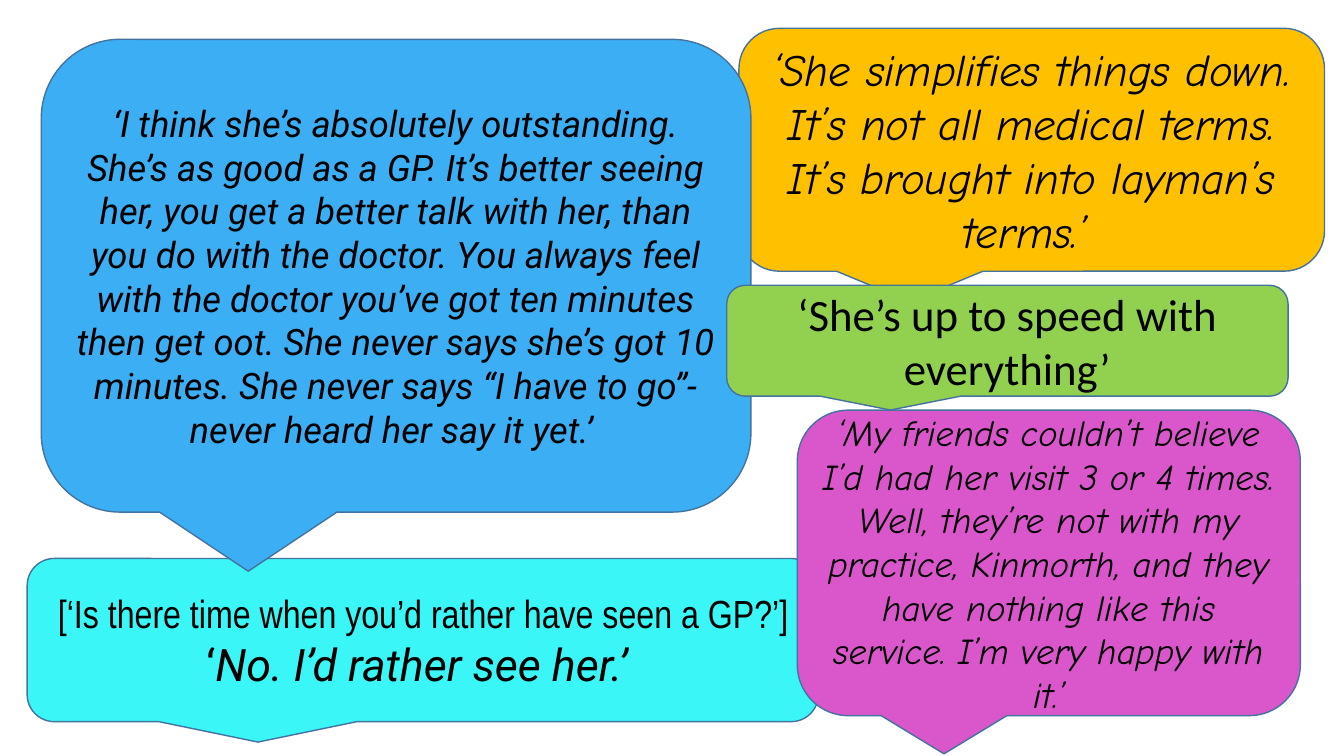
from pptx import Presentation
from pptx import util as u
from pptx.dml.color import RGBColor
from pptx.enum import shapes, text

COLOURS = {
    "cyan": "3AF6F6",
    "amber": "FFC000",
    "blue": "3CAEF4",
    "green": "92D050",
    "magenta": "D957CA",
    "outline": "43739E",
    "ink": "000000",
}

# Each quote: fill, box (left, top, width, height in points),
# runs (wording, font, size, italic); listed from back to front.
QUOTES = [
    ("cyan", (19.4, 398.9, 565.2, 116.6), [
        ("[‘Is there time when you’d rather have seen a GP?’] ", "Arial Narrow", 28, False),
        ("‘", "Roboto", 32, False),
        ("No. I’d rather see her.’ ", "Roboto", 32, True),
    ]),
    ("amber", (527.8, 20.2, 418.3, 173.5), [
        ("‘She simplifies things down. It’s not all medical terms. "
         "It’s brought into layman’s terms.’ ", "Comic Neue", 32, True),
    ]),
    ("blue", (29.5, 28.1, 506.9, 337.7), [
        ("‘I think she’s absolutely outstanding. She’s as good as a GP. "
         "It’s better seeing her, you get a better talk with her, than you do "
         "with the doctor. You always feel with the doctor you’ve got ten "
         "minutes then get oot. She never says she’s got 10 minutes. She never "
         "says “I have to go”- never heard her say it yet.’ ", "Roboto", 26, True),
    ]),
    ("green", (519.1, 203.8, 401, 79.2), [
        ("‘She’s up to speed with everything’", "Calibri", 32, False),
    ]),
    ("magenta", (569.5, 293, 359.3, 218.2), [
        ("‘My friends couldn’t believe I’d had her visit 3 or 4 times. Well, "
         "they’re not with my practice, Kinmorth, and they have nothing like "
         "this service. I’m very happy with it.’", "Comic Neue", 26, True),
    ]),
]


def rgb(name):
    return RGBColor.from_string(COLOURS[name])


def add_quote(slide, fill, box, runs):
    sp = slide.shapes.add_shape(
        shapes.MSO_SHAPE.ROUNDED_RECTANGULAR_CALLOUT, *map(u.Pt, box))
    sp.shadow.inherit = False
    sp.fill.solid()
    sp.fill.fore_color.rgb = rgb(fill)
    sp.line.color.rgb = rgb("outline")
    sp.line.width = u.Pt(1)
    tf = sp.text_frame
    tf.word_wrap = True
    tf.vertical_anchor = text.MSO_ANCHOR.MIDDLE
    p = tf.paragraphs[0]
    p.alignment = text.PP_ALIGN.CENTER
    for wording, font, size, italic in runs:
        r = p.add_run()
        r.text = wording
        r.font.name = font
        r.font.size = u.Pt(size)
        r.font.italic = italic
        r.font.color.rgb = rgb("ink")


def main():
    prs = Presentation()
    prs.slide_width, prs.slide_height = u.Pt(960), u.Pt(540)
    slide = prs.slides.add_slide(prs.slide_layouts[6])
    for quote in QUOTES:
        add_quote(slide, *quote)
    prs.save("out.pptx")


if __name__ == "__main__":
    main()
